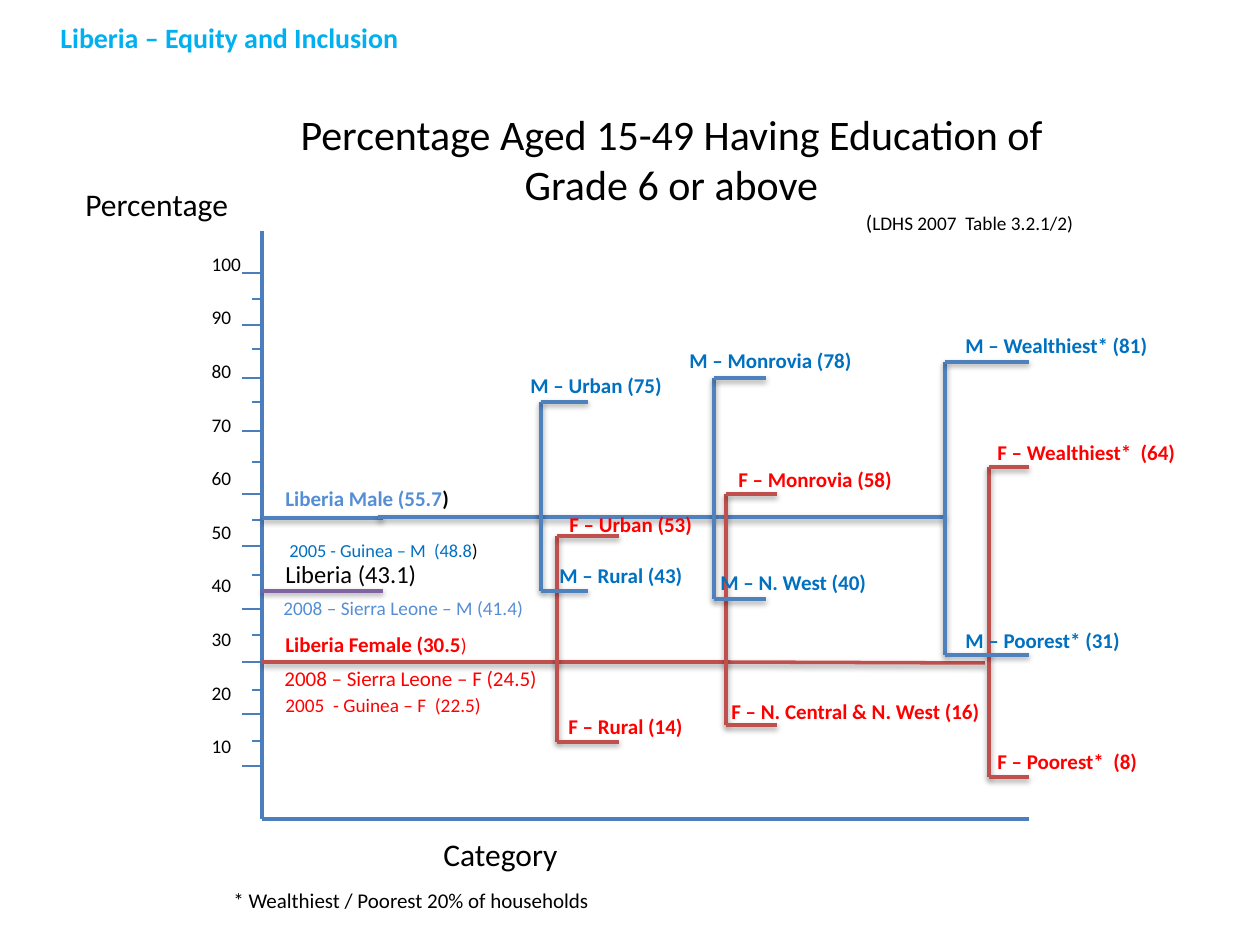
import pptx
import pptx.dml.color
import pptx.enum.shapes
import pptx.enum.text
import pptx.oxml
import pptx.oxml.ns
import pptx.util

THEME = {
    "font": "Calibri",
    "black": "000000", "header": "00B0F0", "axis": "4B7EBC",
    "male line": "4F81BD", "female line": "C0504D", "total line": "8064A2",
    "male": "0070C0", "pale male": "558ED5", "female": "FF0000",
    "title size": 24, "axis title size": 18, "header size": 16, "total size": 14,
    "label size": 12, "small size": 11, "smallest size": 10.5,
    "axis width": 2.25, "tick width": 0.75, "data width": 2,
}
PX = 914400 / 126


def format_font(font, size, color, bold=False):
    font.name = THEME["font"]
    font.size = pptx.util.Pt(THEME[size])
    font.bold = bold
    font.color.rgb = pptx.dml.color.RGBColor.from_string(THEME[color])


def draw_line(x1, y1, x2, y2, color, width):
    line = slide.shapes.add_connector(
        pptx.enum.shapes.MSO_CONNECTOR.STRAIGHT, *[round(n * PX) for n in (x1, y1, x2, y2)])
    line.line.color.rgb = pptx.dml.color.RGBColor.from_string(THEME[color])
    line.line.width = pptx.util.Pt(THEME[width])
    if color == "axis":
        properties = line._element.spPr
        properties.append(pptx.oxml.parse_xml(
            f'<a:effectLst {pptx.oxml.ns.nsdecls("a")}/>'))


deck = pptx.Presentation()
deck.slide_width = pptx.util.Inches(10)
deck.slide_height = pptx.util.Inches(7.5)
slide = deck.slides.add_slide(deck.slide_layouts[1])

title, scale = slide.placeholders
for part, box in ((title, (257, 102, 829, 140)), (scale, (199, 84, 998, 760))):
    part.left, part.top, part.width, part.height = [round(n * PX) for n in box]
    part.text_frame.auto_size = pptx.enum.text.MSO_AUTO_SIZE.NONE
    part.text_frame.vertical_anchor = pptx.enum.text.MSO_ANCHOR.TOP

title.text_frame.text = "Percentage Aged 15-49 Having Education of Grade 6 or above"
heading = title.text_frame.paragraphs[0]
heading.alignment = pptx.enum.text.PP_ALIGN.CENTER
format_font(heading.runs[0].font, "title size", "black")
source = title.text_frame.add_paragraph()
source.text = "("
source.alignment = pptx.enum.text.PP_ALIGN.RIGHT
format_font(source.runs[0].font, "label size", "black")
citation = source.add_run()
citation.text = "LDHS 2007  Table 3.2.1/2)"
format_font(citation.font, "small size", "black")

scale.text_frame.margin_top = round(168 * PX)
scale.text_frame.text = "\n".join(str(value) for value in range(100, 0, -10))
for index, value in enumerate(scale.text_frame.paragraphs):
    value.space_before = pptx.util.Pt(17.43 if index else 0)
    indent = value._p.get_or_add_pPr()
    indent.set("marL", "0")
    indent.set("indent", "0")
    indent.append(pptx.oxml.parse_xml(f'<a:buNone {pptx.oxml.ns.nsdecls("a")}/>'))
    format_font(value.runs[0].font, "small size", "black")

draw_line(262, 231, 262, 819, "axis", "axis width")
draw_line(262, 819, 1029, 819, "axis", "axis width")
for tick_left, tick_rows in (
    (242, (273, 325, 378, 431, 494, 546, 609, 662, 714, 766)),
    (252, (299, 349, 402, 462, 520, 575, 635, 690, 741)),
):
    for y in tick_rows:
        draw_line(tick_left, y, 262, y, "axis", "tick width")

for x1, y1, x2, y2, color in (
    (262, 591, 383, 591, "total line"),
    (262, 518, 383, 518, "male line"),
    (378, 517, 539, 517, "male line"),
    (539, 517, 945, 517, "male line"),
    (262, 662, 557, 662, "female line"),
    (557, 662, 725, 662, "female line"),
    (726, 662, 985, 663, "female line"),
):
    draw_line(x1, y1, x2, y2, color, "data width")

for x, top, bottom, end, color in (
    (557, 536, 742, 619, "female line"),
    (726, 494, 725, 777, "female line"),
    (989, 467, 777, 1029, "female line"),
    (541, 402, 591, 588, "male line"),
    (714, 378, 599, 766, "male line"),
    (945, 362, 655, 1029, "male line"),
):
    draw_line(x, top, x, bottom, color, "data width")
    for y in (top, bottom):
        draw_line(x, y, end, y, color, "data width")

for text, x, y, width, height, size, color, bold, tail in (
    ("Liberia – Equity and Inclusion", 48, 14, 391, 47, "header size", "header", True, None),
    ("Category", 431, 829, 347, 50, "axis title size", "black", False, None),
    ("Percentage", 73, 179, 189, 50, "axis title size", "black", False, None),
    ("* Wealthiest / Poorest 20% of households", 221, 881, 651, 38, "label size", "black", False, None),
    ("Liberia (43.1)", 273, 553, 199, 43, "total size", "black", False, None),
    ("Liberia Male (55.7", 273, 479, 210, 38, "label size", "pale male", True, ("label size", "black", True)),
    ("Liberia Female (30.5", 273, 625, 210, 38, "label size", "female", True, ("small size", "female", False)),
    ("2008 – Sierra Leone – F (24.5)", 272, 659, 306, 38, "label size", "female", False, None),
    ("2005  - Guinea – F  (22.5)", 273, 687, 252, 37, "small size", "female", False, None),
    ("2008 – Sierra Leone – M (41.4)", 271, 590, 310, 37, "small size", "pale male", False, None),
    ("2005 - Guinea – M  (48.8", 277, 533, 242, 37, "smallest size", "male", False, ("smallest size", "black", False)),
    ("F – Urban (53)", 557, 505, 150, 38, "label size", "female", True, None),
    ("F – Rural (14)", 556, 707, 152, 38, "label size", "female", True, None),
    ("F – Monrovia (58)", 726, 460, 179, 38, "label size", "female", True, None),
    ("F – N. Central & N. West (16)", 719, 692, 291, 38, "label size", "female", True, None),
    ("F – Wealthiest*  (64)", 985, 433, 229, 38, "label size", "female", True, None),
    ("F – Poorest*  (8)", 985, 742, 229, 38, "label size", "female", True, None),
    ("M – Urban (75)", 518, 366, 165, 38, "label size", "male", True, None),
    ("M – Rural (43)", 547, 556, 158, 38, "label size", "male", True, None),
    ("M – Monrovia (78)", 677, 341, 228, 38, "label size", "male", True, None),
    ("M – N. West (40)", 708, 563, 183, 38, "label size", "male", True, None),
    ("M – Wealthiest* (81)", 953, 326, 208, 38, "label size", "male", True, None),
    ("M – Poorest* (31)", 953, 621, 202, 38, "label size", "male", True, None),
):
    label = slide.shapes.add_textbox(*[round(n * PX) for n in (x, y, width, height)])
    label.text_frame.word_wrap = True
    wording = label.text_frame.paragraphs[0]
    wording.text = text
    format_font(wording.runs[0].font, size, color, bold)
    if tail:
        closing = wording.add_run()
        closing.text = ")"
        format_font(closing.font, *tail)

deck.save("out.pptx")
